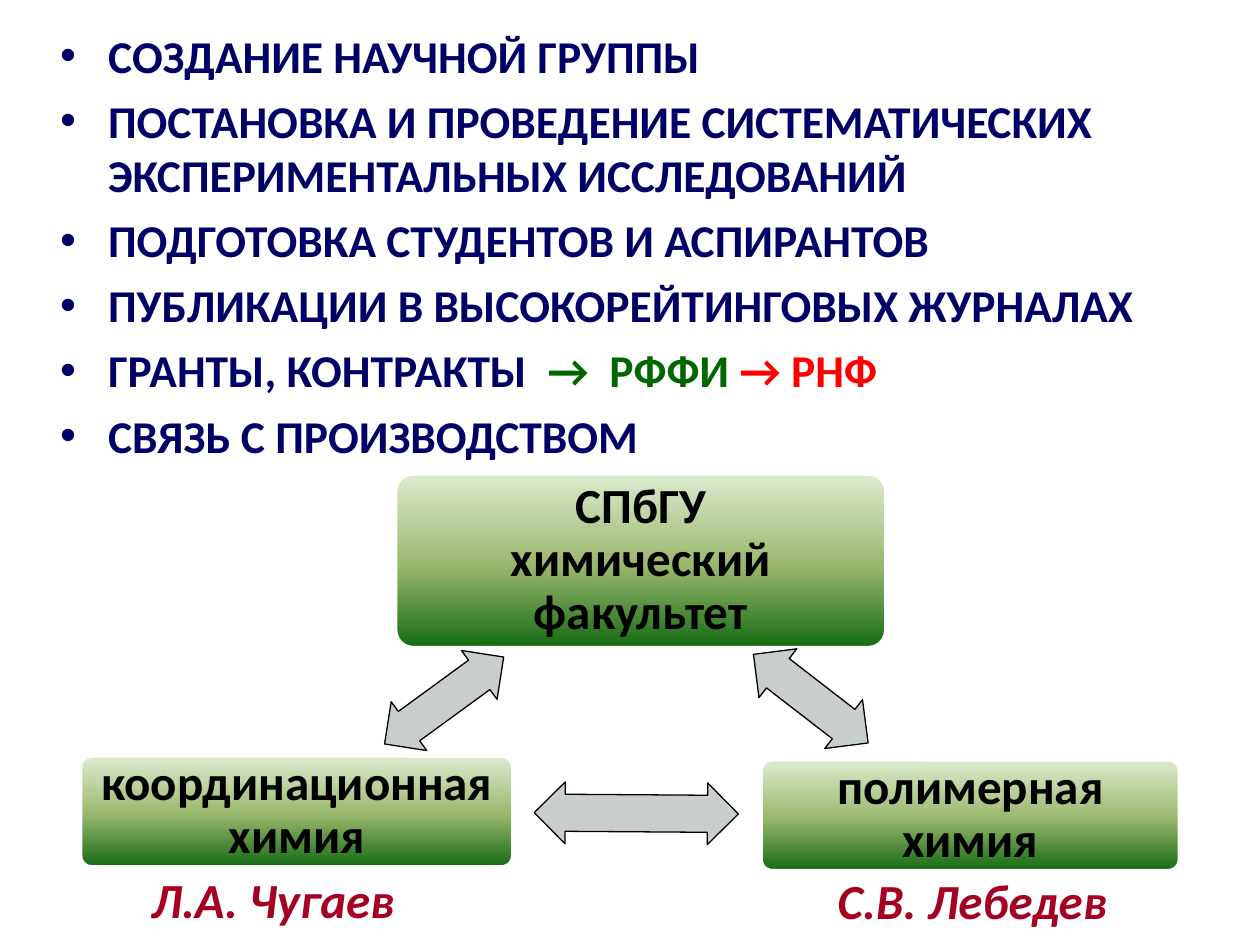
from copy import deepcopy
from dataclasses import dataclass

from lxml import etree
from pptx import Presentation
from pptx import util as u
from pptx.dml import color
from pptx.enum import shapes, text
from pptx.oxml import ns

FONT = "Calibri"
NAVY, GREEN, RED, CRIMSON = "000066", "006600", "FF0000", "A50021"
BLACK, WHITE, GREY = "000000", "FFFFFF", "C8CECA"
GRADIENT = [(0, "DDEBCF"), (0.52, "9CB86E"), (1, "156B13")]


@dataclass
class Span:
    words: str
    hue: str = NAVY


@dataclass
class Frame:
    left: float
    top: float
    width: float
    height: float

    def lengths(self):
        return [u.Inches(n) for n in (self.left, self.top, self.width, self.height)]


@dataclass
class Unit:
    frame: Frame
    lines: list[str]


@dataclass
class Arrow:
    frame: Frame
    angle: float


@dataclass
class Name:
    frame: Frame
    words: str


GOALS = [
    [Span("СОЗДАНИЕ НАУЧНОЙ ГРУППЫ")],
    [Span("ПОСТАНОВКА И ПРОВЕДЕНИЕ СИСТЕМАТИЧЕСКИХ ЭКСПЕРИМЕНТАЛЬНЫХ ИССЛЕДОВАНИЙ")],
    [Span("ПОДГОТОВКА СТУДЕНТОВ И АСПИРАНТОВ")],
    [Span("ПУБЛИКАЦИИ В ВЫСОКОРЕЙТИНГОВЫХ ЖУРНАЛАХ")],
    [Span("ГРАНТЫ, КОНТРАКТЫ  "), Span("→  РФФИ ", GREEN), Span("→ РНФ", RED)],
    [Span("СВЯЗЬ С ПРОИЗВОДСТВОМ")],
]
UNITS = [
    Unit(Frame(3.14, 3.76, 3.89, 1.38), ["СПбГУ", "химический факультет"]),
    Unit(Frame(6.04, 6.03, 3.32, 0.88), ["полимерная химия"]),
    Unit(Frame(0.64, 6, 3.43, 0.88), ["координационная химия"]),
]
ARROWS = [
    Arrow(Frame(5.86, 5.3, 1.15, 0.49), 37.7),
    Arrow(Frame(4.24, 6.21, 1.62, 0.49), 180.4),
    Arrow(Frame(2.94, 5.32, 1.17, 0.48), 323.9),
]
NAMES = [
    Name(Frame(1.1, 6.85, 2.25, 0.57), "Л.А. Чугаев"),
    Name(Frame(6.55, 6.86, 2.5, 0.57), "С.В. Лебедев"),
]


def rgb(value: str) -> color.RGBColor:
    return color.RGBColor.from_string(value)


def add_span(para, words: str, size: float, hue: str, italic: bool = False) -> None:
    span = para.add_run()
    span.text = words
    font = span.font
    font.name, font.size, font.bold, font.italic = FONT, u.Pt(size), True, italic
    font.color.rgb = rgb(hue)


def next_para(frame, index: int):
    return frame.add_paragraph() if index else frame.paragraphs[0]


def add_text_box(page, frame: Frame):
    box = page.shapes.add_textbox(*frame.lengths()).text_frame
    box.word_wrap = True
    box.auto_size = text.MSO_AUTO_SIZE.SHAPE_TO_FIT_TEXT
    return box


def add_bullet(para) -> None:
    props = para._p.get_or_add_pPr()
    indent = u.Inches(0.38)
    props.set("marL", str(indent))
    props.set("indent", str(-indent))
    etree.SubElement(props, ns.qn("a:buFont"), typeface="Arial")
    etree.SubElement(props, ns.qn("a:buChar"), char="•")


def add_goals(page, frame: Frame, goals: list[list[Span]]) -> None:
    box = add_text_box(page, frame)
    for index, goal in enumerate(goals):
        para = next_para(box, index)
        para.space_after = u.Pt(6)
        add_bullet(para)
        for span in goal:
            add_span(para, span.words, 26, span.hue)


def add_outlined(page, kind, frame: Frame, hue: str, width: float):
    shape = page.shapes.add_shape(kind, *frame.lengths())
    shape.shadow.inherit = False
    shape.line.color.rgb = rgb(hue)
    shape.line.width = u.Pt(width)
    return shape


def fill_gradient(shape) -> None:
    shape.fill.gradient()
    shape.fill.gradient_angle = 270
    stops = shape._element.spPr.find(ns.qn("a:gradFill")).find(ns.qn("a:gsLst"))
    stops.append(deepcopy(stops[0]))
    for stop, (position, hue) in zip(shape.fill.gradient_stops, GRADIENT):
        stop.position = position
        stop.color.rgb = rgb(hue)


def add_unit(page, unit: Unit) -> None:
    shape = add_outlined(page, shapes.MSO_SHAPE.ROUNDED_RECTANGLE, unit.frame, WHITE, 2)
    shape.adjustments[0] = 0.1
    fill_gradient(shape)
    frame = shape.text_frame
    frame.word_wrap = True
    frame.vertical_anchor = text.MSO_ANCHOR.MIDDLE
    frame.margin_left = frame.margin_right = u.Inches(0.12)
    frame.margin_top = frame.margin_bottom = u.Inches(0.12)
    for index, line in enumerate(unit.lines):
        para = next_para(frame, index)
        para.alignment = text.PP_ALIGN.CENTER
        para.line_spacing = 0.9
        add_span(para, line, 28, BLACK)


def add_arrow(page, arrow: Arrow) -> None:
    shape = add_outlined(page, shapes.MSO_SHAPE.LEFT_RIGHT_ARROW, arrow.frame, BLACK, 0.75)
    shape.adjustments[0], shape.adjustments[1] = 0.6, 0.5
    shape.rotation = arrow.angle
    shape.fill.solid()
    shape.fill.fore_color.rgb = rgb(GREY)


def add_name(page, name: Name) -> None:
    box = add_text_box(page, name.frame)
    add_span(box.paragraphs[0], name.words, 28, CRIMSON, italic=True)


def main() -> None:
    deck = Presentation()
    deck.slide_width, deck.slide_height = u.Inches(10), u.Inches(7.5)
    page = deck.slides.add_slide(deck.slide_layouts[6])
    add_goals(page, Frame(0.38, 0.17, 9.33, 3.7), GOALS)
    for unit in UNITS:
        add_unit(page, unit)
    for arrow in ARROWS:
        add_arrow(page, arrow)
    for name in NAMES:
        add_name(page, name)
    deck.save("out.pptx")


if __name__ == "__main__":
    main()
